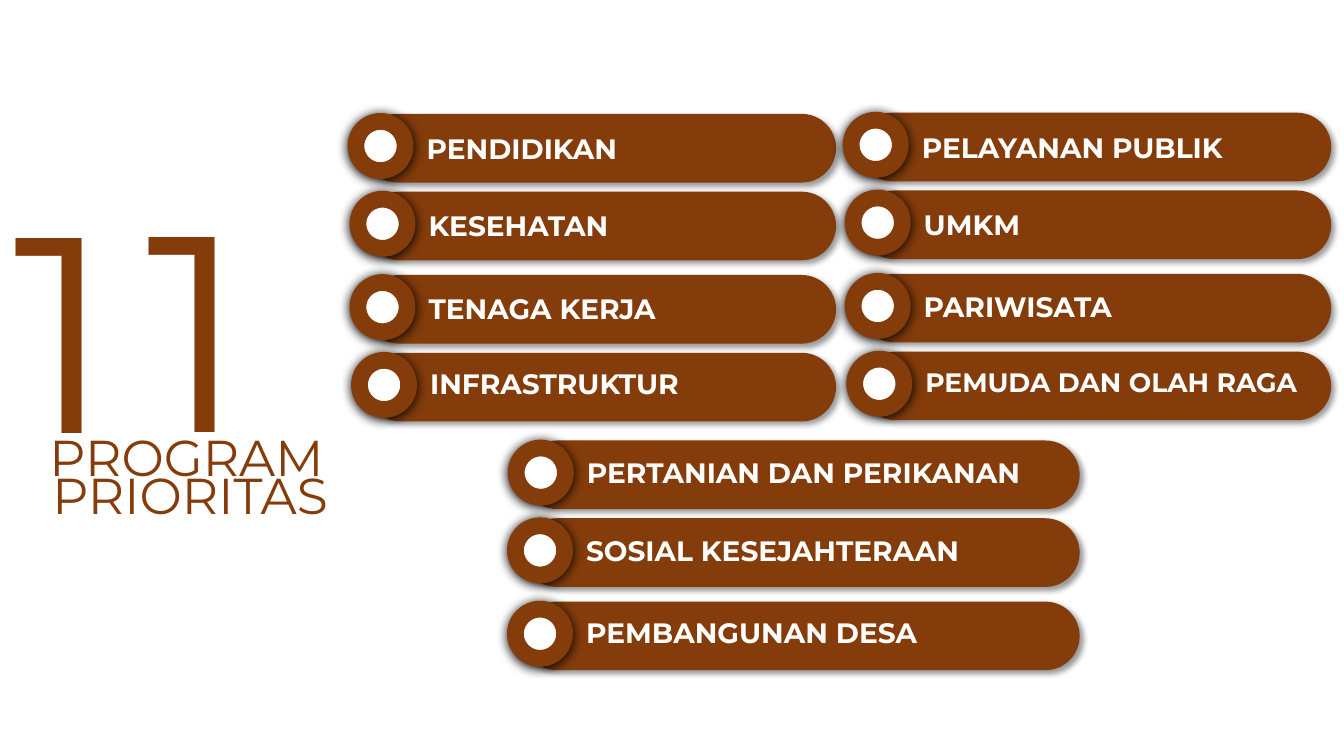
from typing import NamedTuple

from lxml import etree
from pptx import Presentation
from pptx.dml.color import RGBColor
from pptx.enum.shapes import MSO_SHAPE
from pptx.enum.text import MSO_AUTO_SIZE, PP_ALIGN
from pptx.oxml.ns import qn
from pptx.util import Cm, Pt

BROWN = RGBColor(0x84, 0x3C, 0x0B)
WHITE = RGBColor(0xFF, 0xFF, 0xFF)
BLACK = RGBColor(0x00, 0x00, 0x00)
FONT = "Montserrat"

PILL = MSO_SHAPE.ROUNDED_RECTANGLE
CIRCLE = MSO_SHAPE.OVAL
LEFT = PP_ALIGN.LEFT
CENTER = PP_ALIGN.CENTER
FIT_SHAPE = MSO_AUTO_SIZE.SHAPE_TO_FIT_TEXT

PILL_HEIGHT = 1.73
DOT_SIZE = 1.24
DOT_SHIFT_LEFT = -0.17
DOT_SHIFT_DOWN = 0.19
LABEL_INDENT = 1.36


class Shadow(NamedTuple):
    opacity: int  # percent
    blur: float  # points
    distance: float  # points
    angle: int  # degrees


class Program(NamedTuple):
    label: str
    label_width: float
    size: int = 20


class Row(NamedTuple):
    offset: float  # below the first row of the column
    indent: float  # right of the column's left edge
    label_drop: float  # from the top of the pill to its label


class Column(NamedTuple):
    left: float
    top: float
    right: float
    rows: list[Row]
    programs: list[Program]


class Title(NamedTuple):
    text: str
    left: float
    top: float
    width: float
    height: float
    size: int
    align: PP_ALIGN


PILL_SHADOW = Shadow(40, 4, 3, 45)
DOT_SHADOW = Shadow(100, 8.5, 1, 90)

UPPER_ROWS = [Row(0, 0, 0.33), Row(1.96, 0.05, 0.3), Row(4.06, 0.05, 0.28), Row(6.02, 0.09, 0.23)]
LOWER_ROWS = [Row(0, 0.02, 0.25), Row(1.96, 0, 0.25), Row(4.06, 0, 0.23)]

COLUMNS = [
    Column(9.14, 2.87, 21.07, UPPER_ROWS, [
        Program("PENDIDIKAN", 7.85),
        Program("KESEHATAN", 7.85),
        Program("TENAGA KERJA", 9.27),
        Program("INFRASTRUKTUR", 10.46),
    ]),
    Column(21.62, 2.84, 33.55, UPPER_ROWS, [
        Program("PELAYANAN PUBLIK", 8.84),
        Program("UMKM", 7.85),
        Program("PARIWISATA", 9.27),
        Program("PEMUDA DAN OLAH RAGA", 10.78, 19),
    ]),
    Column(13.16, 11.1, 27.21, LOWER_ROWS, [
        Program("PERTANIAN DAN PERIKANAN", 12.7),
        Program("SOSIAL KESEJAHTERAAN", 12.7),
        Program("PEMBANGUNAN DESA", 12.7),
    ]),
]

TITLES = [
    Title("1", 0.1, 3.78, 4.52, 8.76, 199, LEFT),
    Title("PROGRAM", 0.66, 10.62, 8.08, 1.8, 36, CENTER),
    Title("1", 3.45, 3.76, 5.59, 8.76, 199, LEFT),
    Title("PRIORITAS", 0.61, 11.56, 8.36, 1.8, 36, CENTER),
]


def add_text(slide, text: str, left: float, top: float, width: float, height: float, *,
             size: int, color: RGBColor, bold: bool = False, align: PP_ALIGN = LEFT) -> None:
    box = slide.shapes.add_textbox(Cm(left), Cm(top), Cm(width), Cm(height))
    frame = box.text_frame
    frame.word_wrap = True
    frame.auto_size = FIT_SHAPE
    paragraph = frame.paragraphs[0]
    paragraph.alignment = align
    run = paragraph.add_run()
    run.text = text
    run.font.name = FONT
    run.font.size = Pt(size)
    run.font.bold = bold
    run.font.color.rgb = color


def set_shadow(shape, shadow: Shadow) -> None:
    shape.shadow.inherit = False
    effects = shape.element.spPr.find(qn("a:effectLst"))
    outer = etree.SubElement(
        effects, qn("a:outerShdw"), blurRad=str(Pt(shadow.blur)), dist=str(Pt(shadow.distance)),
        dir=str(shadow.angle * 60000), algn="ctr", rotWithShape="0")
    color = etree.SubElement(outer, qn("a:srgbClr"), val=str(BLACK))
    etree.SubElement(color, qn("a:alpha"), val=str(shadow.opacity * 1000))


def add_filled_shape(slide, kind: MSO_SHAPE, left: float, top: float, width: float,
                     height: float, fill: RGBColor, shadow: Shadow):
    shape = slide.shapes.add_shape(kind, Cm(left), Cm(top), Cm(width), Cm(height))
    shape.fill.solid()
    shape.fill.fore_color.rgb = fill
    shape.line.fill.background()
    set_shadow(shape, shadow)
    return shape


def add_program(slide, program: Program, row: Row, column: Column) -> None:
    left = column.left + row.indent
    top = column.top + row.offset
    pill = add_filled_shape(slide, PILL, left, top, column.right - left, PILL_HEIGHT,
                            BROWN, PILL_SHADOW)
    pill.adjustments[0] = 0.5
    dot = add_filled_shape(slide, CIRCLE, left + DOT_SHIFT_LEFT, top + DOT_SHIFT_DOWN,
                           DOT_SIZE, DOT_SIZE, WHITE, DOT_SHADOW)
    dot.line.color.rgb = BROWN
    dot.line.width = Pt(12)
    add_text(slide, program.label, left + LABEL_INDENT, top + row.label_drop,
             program.label_width, 1.12, size=program.size, color=WHITE, bold=True)


def main() -> None:
    presentation = Presentation()
    presentation.slide_width = Cm(33.87)
    presentation.slide_height = Cm(19.05)
    slide = presentation.slides.add_slide(presentation.slide_layouts[6])

    for title in TITLES:
        add_text(slide, title.text, title.left, title.top, title.width, title.height,
                 size=title.size, color=BROWN, align=title.align)
    for column in COLUMNS:
        for program, row in zip(column.programs, column.rows):
            add_program(slide, program, row, column)

    presentation.save("out.pptx")


if __name__ == "__main__":
    main()
